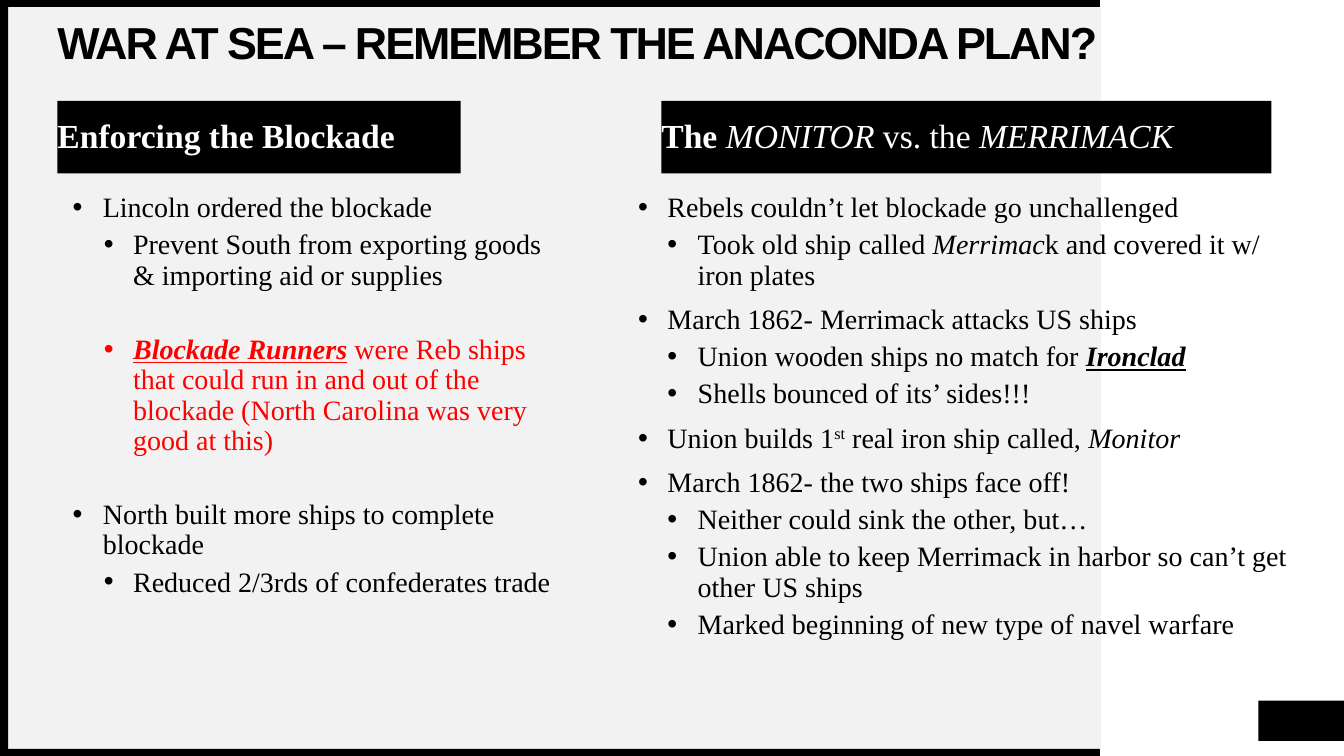
from dataclasses import dataclass

from pptx import Presentation
from pptx.dml.color import RGBColor
from pptx.enum.shapes import MSO_SHAPE
from pptx.enum.text import MSO_ANCHOR, PP_ALIGN
from pptx.oxml import parse_xml
from pptx.oxml.ns import nsdecls
from pptx.util import Inches, Pt

BLACK = RGBColor(0x00, 0x00, 0x00)
WHITE = RGBColor(0xFF, 0xFF, 0xFF)
PANEL = RGBColor(0xF2, 0xF2, 0xF2)
RED = RGBColor(0xFF, 0x00, 0x00)
SERIF = "Times New Roman"


@dataclass(frozen=True)
class Box:
    left: float
    top: float
    width: float
    height: float

    def emu(self) -> tuple:
        return tuple(Inches(v) for v in (self.left, self.top, self.width, self.height))


@dataclass(frozen=True)
class Span:
    text: str
    bold: bool = False
    italic: bool = False
    underline: bool = False
    color: RGBColor = BLACK
    size: float = 20
    font: str = SERIF
    spacing: float = 0  # points between letters
    superscript: bool = False


@dataclass(frozen=True)
class Bullet:
    level: int
    spans: tuple
    before: float = 5


@dataclass(frozen=True)
class Bar:
    box: Box
    color: RGBColor = BLACK


INDENTS = ((0.29, 0.29), (0.59, 0.3), (0.89, 0.29))  # left margin, hanging
TOPIC_GAP = 10
SECTION_GAP = 31.5

FRAME = (
    Bar(Box(0.08, 0.07, 10.84, 7.36), PANEL),
    Bar(Box(12.48, 6.95, 0.86, 0.4)),
    Bar(Box(0, 7.43, 10.91, 0.07)),
    Bar(Box(0, 0, 10.91, 0.07)),
    Bar(Box(0, 0.04, 0.08, 7.46)),
)

HEADINGS = (
    (Box(0.57, 1, 4, 0.72),
     (Span("Enforcing the Blockade", bold=True, color=WHITE, size=24),)),
    (Box(6.56, 1, 6.05, 0.72),
     (Span("The ", bold=True, color=WHITE, size=24),
      Span("MONITOR", italic=True, color=WHITE, size=24),
      Span(" vs. the ", color=WHITE, size=24),
      Span("MERRIMACK", italic=True, color=WHITE, size=24))),
)

BLOCKADE = (
    Bullet(1, (Span("Lincoln ordered the blockade"),)),
    Bullet(2, (Span("Prevent South from exporting goods & importing aid or supplies"),)),
    Bullet(2, (Span("Blockade Runners", bold=True, italic=True, underline=True, color=RED),
               Span(" were Reb ships that could run in and out of the blockade "
                    "(North Carolina was very good at this)", color=RED)), SECTION_GAP),
    Bullet(1, (Span("North built more ships to complete blockade"),), SECTION_GAP),
    Bullet(2, (Span("Reduced 2/3rds of confederates trade"),)),
)

IRONCLADS = (
    Bullet(0, (Span("Rebels couldn’t let blockade go unchallenged"),), TOPIC_GAP),
    Bullet(1, (Span("Took old ship called "), Span("Merrimac", italic=True),
               Span("k and covered it w/ iron plates"))),
    Bullet(0, (Span("March 1862- Merrimack attacks US ships"),), TOPIC_GAP),
    Bullet(1, (Span("Union wooden ships no match for "),
               Span("Ironclad", bold=True, italic=True, underline=True))),
    Bullet(1, (Span("Shells bounced of its’ sides!!!"),)),
    Bullet(0, (Span("Union builds 1"), Span("st", superscript=True),
               Span(" real iron ship called, "), Span("Monitor", italic=True)), TOPIC_GAP),
    Bullet(0, (Span("March 1862- the two ships face off!"),), TOPIC_GAP),
    Bullet(1, (Span("Neither could sink the other, but…"),)),
    Bullet(1, (Span("Union able to keep Merrimack in harbor so can’t get other US ships"),)),
    Bullet(1, (Span("Marked beginning of new type of navel warfare"),)),
)


def add_bar(slide, bar: Bar):
    sp = slide.shapes.add_shape(MSO_SHAPE.RECTANGLE, *bar.box.emu())
    sp.shadow.inherit = False
    sp.fill.solid()
    sp.fill.fore_color.rgb = bar.color
    sp.line.fill.background()
    return sp


def prepare_frame(sp, anchor: MSO_ANCHOR = MSO_ANCHOR.TOP):
    """Give the shape's text frame wrapping, an anchor and no margins."""
    tf = sp.text_frame
    tf.word_wrap = True
    tf.vertical_anchor = anchor
    tf.margin_left = tf.margin_top = tf.margin_right = tf.margin_bottom = 0
    return tf


def fill_paragraph(p, spans: tuple, before: float = 0) -> None:
    p.alignment = PP_ALIGN.LEFT
    p.line_spacing = 0.9
    p.space_before = Pt(before)
    for span in spans:
        r = p.add_run()
        r.text = span.text
        font = r.font
        font.name, font.size = span.font, Pt(span.size)
        font.bold, font.italic, font.underline = span.bold, span.italic, span.underline
        font.color.rgb = span.color
        rPr = r._r.get_or_add_rPr()
        if span.spacing:
            rPr.set("spc", str(int(span.spacing * 100)))
        if span.superscript:
            rPr.set("baseline", "30000")


def add_bullets(slide, box: Box, bullets: tuple) -> None:
    tf = prepare_frame(slide.shapes.add_textbox(*box.emu()))
    for i, bullet in enumerate(bullets):
        p = tf.add_paragraph() if i else tf.paragraphs[0]
        fill_paragraph(p, bullet.spans, bullet.before)
        p.level = bullet.level
        margin, hanging = INDENTS[bullet.level]
        pPr = p._p.get_or_add_pPr()
        pPr.set("marL", str(Inches(margin)))
        pPr.set("indent", str(-Inches(hanging)))
        pPr.append(parse_xml(f'<a:buFont {nsdecls("a")} typeface="Arial"/>'))
        pPr.append(parse_xml(f'<a:buChar {nsdecls("a")} char="•"/>'))


def main() -> None:
    prs = Presentation()
    prs.slide_width, prs.slide_height = Inches(13.33), Inches(7.5)
    slide = prs.slides.add_slide(prs.slide_layouts[6])

    for bar in FRAME:
        add_bar(slide, bar)

    title = slide.shapes.add_textbox(*Box(0.57, 0.1, 11.79, 0.7).emu())
    fill_paragraph(prepare_frame(title, MSO_ANCHOR.MIDDLE).paragraphs[0], (
        Span("WAR AT SEA – REMEMBER THE ANACONDA PLAN?", bold=True, size=32,
             font="Arial", spacing=-1.5),))

    add_bullets(slide, Box(0.43, 1.92, 5.2, 5.42), BLOCKADE)
    add_bullets(slide, Box(6.33, 1.92, 6.51, 5.21), IRONCLADS)

    for box, spans in HEADINGS:
        tf = prepare_frame(add_bar(slide, Bar(box)), MSO_ANCHOR.MIDDLE)
        fill_paragraph(tf.paragraphs[0], spans, TOPIC_GAP)

    prs.save("out.pptx")


if __name__ == "__main__":
    main()
